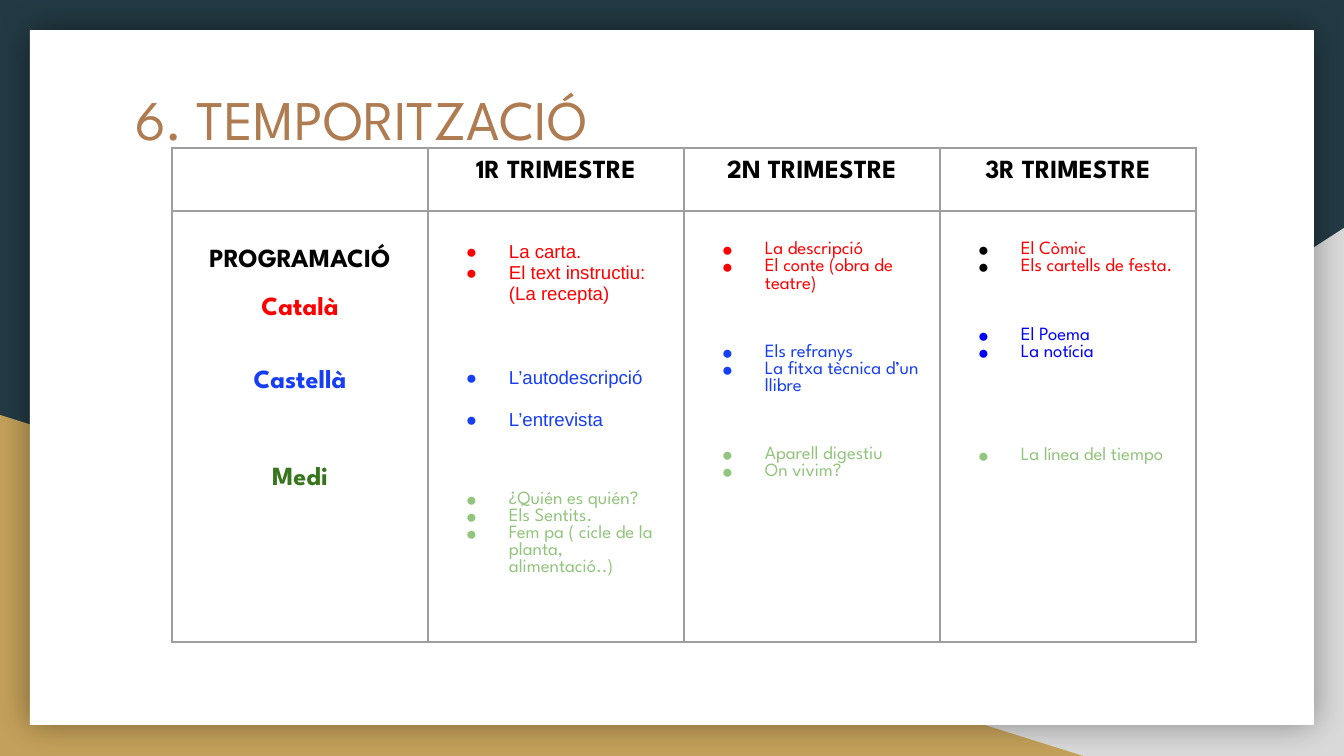
import pptx
import pptx.util
import pptx.dml.color
import pptx.enum.shapes
import pptx.enum.text
import pptx.oxml
import pptx.oxml.ns

PX = 914400 / 134.4
RGB = pptx.dml.color.RGBColor
NAVY = RGB(0x23, 0x3A, 0x44)
GREY = RGB(0xD9, 0xD9, 0xD9)
GOLD = RGB(0xC4, 0xA1, 0x5A)
WHITE = RGB(0xFF, 0xFF, 0xFF)
BROWN = RGB(0xAF, 0x7B, 0x51)
BORDER = RGB(0x9E, 0x9E, 0x9E)
BLACK = RGB(0x00, 0x00, 0x00)
RED = RGB(0xFF, 0x00, 0x00)
BLUE = RGB(0x16, 0x3E, 0xF5)
PURE_BLUE = RGB(0x00, 0x00, 0xFF)
GREEN = RGB(0x38, 0x76, 0x1D)
LIGHT_GREEN = RGB(0x93, 0xC4, 0x7D)

SPARTAN = "League Spartan"
ARIAL = "Arial"
TRIANGLE = pptx.enum.shapes.MSO_SHAPE.RIGHT_TRIANGLE
RECTANGLE = pptx.enum.shapes.MSO_SHAPE.RECTANGLE
CENTER = pptx.enum.text.PP_ALIGN.CENTER

TERMS = ["", "1R TRIMESTRE", "2N TRIMESTRE", "3R TRIMESTRE"]
# Subject, colour, space before in points
SUBJECTS = [
    ("PROGRAMACIÓ", BLACK, 0),
    ("Català", RED, 13),
    ("Castellà", BLUE, 26),
    ("Medi", GREEN, 39),
]
# One list per term; each group: space before, space between, font,
# bullet colour, text colour, items
TERM_TOPICS = [
    [
        (0, 0, ARIAL, RED, RED,
         ["La carta.", "El text instructiu: (La recepta)"]),
        (34, 11, ARIAL, BLUE, BLUE, ["L’autodescripció", "L’entrevista"]),
        (33, 0, SPARTAN, LIGHT_GREEN, LIGHT_GREEN,
         ["¿Quién es quién?", "Els Sentits.",
          "Fem pa ( cicle de la planta, alimentació..)"]),
    ],
    [
        (0, 0, SPARTAN, RED, RED,
         ["La descripció", "El conte (obra de teatre)"]),
        (27.5, 0, SPARTAN, BLUE, BLUE,
         ["Els refranys", "La fitxa tècnica d’un llibre"]),
        (27.5, 0, SPARTAN, LIGHT_GREEN, LIGHT_GREEN,
         ["Aparell digestiu", "On vivim?"]),
    ],
    [
        (0, 0, SPARTAN, BLACK, RED, ["El Còmic", "Els cartells de festa."]),
        (27.5, 0, SPARTAN, PURE_BLUE, PURE_BLUE, ["El Poema", "La notícia"]),
        (46, 0, SPARTAN, LIGHT_GREEN, LIGHT_GREEN, ["La línea del tiempo"]),
    ],
]


def px(length):
    return pptx.util.Emu(round(length * PX))


def xml(markup):
    head, tail = markup.split(" ", 1)
    return pptx.oxml.parse_xml(f"{head} {pptx.oxml.ns.nsdecls('a')} {tail}")


def add_backdrop(slide, kind, box, color):
    shape = slide.shapes.add_shape(kind, *map(px, box))
    shape.shadow.inherit = False
    shape.fill.solid()
    shape.fill.fore_color.rgb = color
    shape.line.fill.background()
    return shape


def add_glow_shadow(shape):
    effects = shape._element.spPr.find(pptx.oxml.ns.qn("a:effectLst"))
    effects.append(xml(
        '<a:outerShdw blurRad="228600" dist="0" dir="0" algn="ctr" rotWithShape="0">'
        '<a:srgbClr val="000000"><a:alpha val="40000"/></a:srgbClr></a:outerShdw>'))


def style(paragraph, size, color, font=SPARTAN, bold=False, before=0):
    paragraph.font.size = pptx.util.Pt(size)
    paragraph.font.name = font
    paragraph.font.bold = bold
    paragraph.font.color.rgb = color
    paragraph.space_before = pptx.util.Pt(before)


def add_bullet(paragraph, color):
    properties = paragraph._p.get_or_add_pPr()
    properties.set("marL", str(px(67)))
    properties.set("indent", str(px(-43)))
    # Bullet elements stand between the spacing and the default run format
    defaults = properties.find(pptx.oxml.ns.qn("a:defRPr"))
    for markup in (f'<a:buClr ><a:srgbClr val="{color}"/></a:buClr>',
                   f'<a:buFont typeface="{ARIAL}"/>',
                   '<a:buChar char="●"/>'):
        defaults.addprevious(xml(markup))


def next_paragraph(frame, text):
    first = frame.paragraphs[0]
    paragraph = frame.add_paragraph() if first.runs else first
    paragraph.text = text
    return paragraph


def format_cell(cell, top_margin):
    cell.margin_left = cell.margin_right = cell.margin_bottom = px(14)
    cell.margin_top = px(top_margin)
    cell.fill.background()
    properties = cell._tc.get_or_add_tcPr()
    for position, side in enumerate("LRTB"):
        properties.insert(position, xml(
            f'<a:ln{side} w="9525"><a:solidFill><a:srgbClr val="{BORDER}"/>'
            f'</a:solidFill></a:ln{side}>'))


def fill_topics(cell, groups):
    for before, between, font, bullet_color, color, items in groups:
        for index, item in enumerate(items):
            paragraph = next_paragraph(cell.text_frame, item)
            style(paragraph, 10, color, font,
                  before=between if index else before)
            add_bullet(paragraph, bullet_color)


def add_schedule(slide):
    frame = slide.shapes.add_table(2, 4, px(172), px(148), px(1024), px(494))
    schedule = frame.table
    schedule.first_row = schedule.horz_banding = False
    for column in schedule.columns:
        column.width = px(256)
    schedule.rows[0].height = px(63)
    schedule.rows[1].height = px(431)

    # Header row
    for column, term in enumerate(TERMS):
        cell = schedule.cell(0, column)
        format_cell(cell, 12)
        heading = cell.text_frame.paragraphs[0]
        heading.text = term
        heading.alignment = CENTER
        style(heading, 14, BLACK, bold=True)

    # Subjects
    subjects_cell = schedule.cell(1, 0)
    format_cell(subjects_cell, 38)
    for subject, color, before in SUBJECTS:
        paragraph = next_paragraph(subjects_cell.text_frame, subject)
        paragraph.alignment = CENTER
        style(paragraph, 14, color, bold=True, before=before)

    # Topics of each term
    for column, groups in enumerate(TERM_TOPICS, start=1):
        cell = schedule.cell(1, column)
        format_cell(cell, 31)
        fill_topics(cell, groups)


def place_title(slide):
    title = slide.shapes.title
    title.left, title.top, title.width, title.height = map(
        px, (121, 71, 698, 140))
    frame = title.text_frame
    frame.text = "6. TEMPORITZACIÓ"
    frame.vertical_anchor = pptx.enum.text.MSO_ANCHOR.TOP
    frame.margin_left = frame.margin_right = frame.margin_bottom = px(14)
    frame.margin_top = px(13)
    frame.paragraphs[0].alignment = pptx.enum.text.PP_ALIGN.LEFT
    style(frame.paragraphs[0], 30, BROWN)
    # Bring the title in front of the backdrop
    title._element.getparent().append(title._element)


def main():
    deck = pptx.Presentation()
    deck.slide_width, deck.slide_height = px(1344), px(756)
    slide = deck.slides.add_slide(deck.slide_layouts[5])
    slide.background.fill.solid()
    slide.background.fill.fore_color.rgb = NAVY

    # Backdrop
    grey_corner = add_backdrop(slide, TRIANGLE, (527, 228, 817, 528), GREY)
    grey_corner._element.spPr.xfrm.set("flipH", "1")
    add_backdrop(slide, TRIANGLE, (0, 415, 1083, 341), GOLD)
    paper = add_backdrop(slide, RECTANGLE, (30, 30, 1284, 695), WHITE)
    add_glow_shadow(paper)

    # Content
    place_title(slide)
    add_schedule(slide)
    deck.save("out.pptx")


if __name__ == "__main__":
    main()
